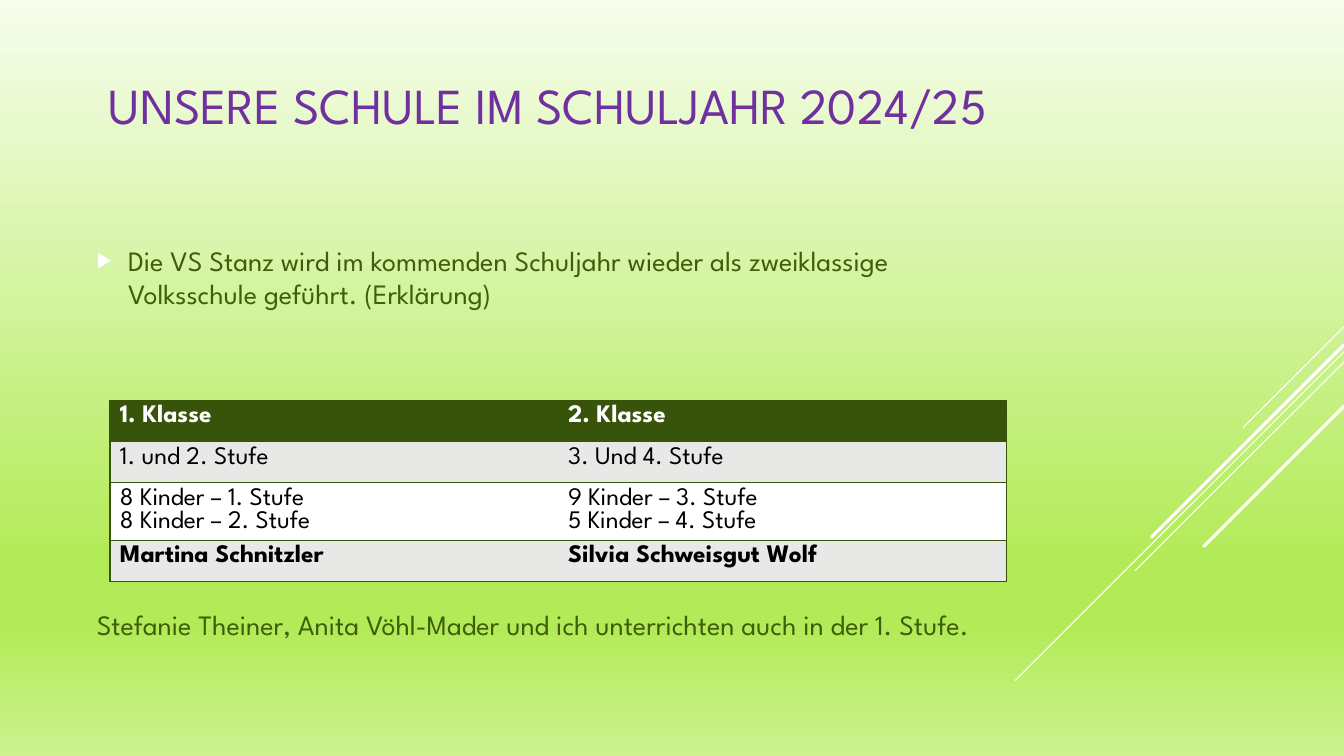
from lxml.etree import SubElement
from pptx import Presentation
from pptx.dml.color import RGBColor
from pptx.enum.shapes import MSO_CONNECTOR as Connector
from pptx.enum.text import MSO_ANCHOR as Anchor, MSO_AUTO_SIZE as AutoSize, PP_ALIGN as Align
from pptx.oxml.ns import qn
from pptx.util import Inches, Pt

FONT = "League Spartan"
WHITE, BLACK, PURPLE = "FFFFFF", "000000", "7030A0"
TEXT_GREEN, TABLE_GREEN, BAND_GRAY = "3E5E08", "38540A", "E8E9E7"
NO_STYLE = "{2D5ABB26-0587-4C30-8999-92F81FD0307C}"
GRADIENT = [(0, "F7FDEC"), (74, "B3EB58"), (83, "B3EB58"), (100, "CDF28F")]
RIGHT_EDGE = 13.33
RAYS = [(3.24, 1, 0.75), (3.49, 3.26, 0.75), (3.59, 2.07, 0.75),
        (3.42, 1.91, 2.25), (4.03, 1.39, 2.25)]
CLASSES = [
    ("1. Klasse", "2. Klasse"),
    ("1. und 2. Stufe", "3. Und 4. Stufe"),
    ("8 Kinder – 1. Stufe\n8 Kinder – 2. Stufe", "9 Kinder – 3. Stufe\n5 Kinder – 4. Stufe"),
    ("Martina Schnitzler", "Silvia Schweisgut Wolf"),
]
ROW_STYLES = [(0.41, TABLE_GREEN, WHITE, True), (0.41, BAND_GRAY, BLACK, False),
              (0.57, WHITE, BLACK, False), (0.41, BAND_GRAY, BLACK, True)]


def color(value):
    return RGBColor.from_string(value)


def add_element(parent, tag, **attributes):
    return SubElement(parent, qn(tag), attributes)


def add_color(parent, value):
    add_element(parent, "a:srgbClr", val=value)


def format_runs(paragraph, size, value, bold=False):
    for run in paragraph.runs:
        run.font.name = FONT
        run.font.size = Pt(size)
        run.font.bold = bold
        run.font.color.rgb = color(value)


def place(shape, box):
    shape.left, shape.top, shape.width, shape.height = map(Inches, box)
    shape.text_frame.word_wrap = True
    shape.text_frame.auto_size = AutoSize.NONE
    shape.text_frame.vertical_anchor = Anchor.MIDDLE


def paint_background(slide):
    fill = slide.background.fill
    fill.gradient()
    fill.gradient_angle = 270
    stops = slide.element.find(".//" + qn("a:gsLst"))
    stops.clear()
    for position, value in GRADIENT:
        add_color(add_element(stops, "a:gs", pos=str(position * 1000)), value)


def draw_rays(slide):
    for top, reach, width in RAYS:
        points = (RIGHT_EDGE, top, RIGHT_EDGE - reach, top + reach)
        ray = slide.shapes.add_connector(Connector.STRAIGHT, *map(Inches, points))
        ray.line.color.rgb = color(WHITE)
        ray.line.width = Pt(width)
        ray.get_or_add_ln().set("cap", "rnd")
        add_element(ray.element.spPr, "a:effectLst")


def fill_title(slide, box):
    title = slide.shapes.title
    place(title, box)
    title.text_frame.text = "UNSERE SCHULE IM SCHULJAHR 2024/25"
    paragraph = title.text_frame.paragraphs[0]
    paragraph.alignment = Align.LEFT
    format_runs(paragraph, 36, PURPLE)


def fill_body(slide, box):
    body = slide.placeholders[1]
    place(body, box)
    body.text_frame.text = (
        "Die VS Stanz wird im kommenden Schuljahr wieder als zweiklassige "
        "Volksschule geführt. (Erklärung)\n"
        "Stefanie Theiner, Anita Vöhl-Mader und ich unterrichten auch in der 1. Stufe."
    )
    for paragraph, indent, gap in zip(body.text_frame.paragraphs, (0.31, 0), (0, 212.8)):
        paragraph.line_spacing = Pt(23.6)
        paragraph.space_before = Pt(gap)
        paragraph.space_after = Pt(0)
        format_runs(paragraph, 20, TEXT_GREEN)
        properties = paragraph._p.get_or_add_pPr()
        properties.set("marL", str(Inches(indent)))
        properties.set("indent", str(-Inches(indent)))
        if indent:
            add_color(add_element(properties, "a:buClr"), WHITE)
            add_element(properties, "a:buSzPct", val="80000")
            add_element(properties, "a:buChar", char="▶")
        else:
            add_element(properties, "a:buNone")


def draw_borders(cell, sides):
    properties = cell._tc.get_or_add_tcPr()
    for index, side in enumerate(sides):
        border = add_element(properties, "a:ln" + side, w=str(Pt(1)))
        add_color(add_element(border, "a:solidFill"), TABLE_GREEN)
        properties.insert(index, border)


def add_class_table(slide, left, top, width):
    height = sum(style[0] for style in ROW_STYLES)
    frame = slide.shapes.add_table(len(CLASSES), 2, *map(Inches, (left, top, width, height)))
    table = frame.table
    frame.element.find(".//" + qn("a:tableStyleId")).text = NO_STYLE
    for row, texts, (row_height, fill, text_color, bold) in zip(table.rows, CLASSES, ROW_STYLES):
        row.height = Inches(row_height)
        for cell, text, outer_side in zip(row.cells, texts, "LR"):
            cell.text_frame.text = text
            for paragraph in cell.text_frame.paragraphs:
                format_runs(paragraph, 18, text_color, bold)
            cell.fill.solid()
            cell.fill.fore_color.rgb = color(fill)
            draw_borders(cell, outer_side + "TB")


def main():
    presentation = Presentation()
    presentation.slide_width = Inches(RIGHT_EDGE)
    presentation.slide_height = Inches(7.5)
    slide = presentation.slides.add_slide(presentation.slide_layouts[1])
    paint_background(slide)
    draw_rays(slide)
    fill_title(slide, (0.98, 0.21, 11.07, 1.65))
    fill_body(slide, (0.86, 1.72, 9.33, 5.34))
    add_class_table(slide, 1.09, 3.97, 8.89)
    presentation.save("out.pptx")


if __name__ == "__main__":
    main()
